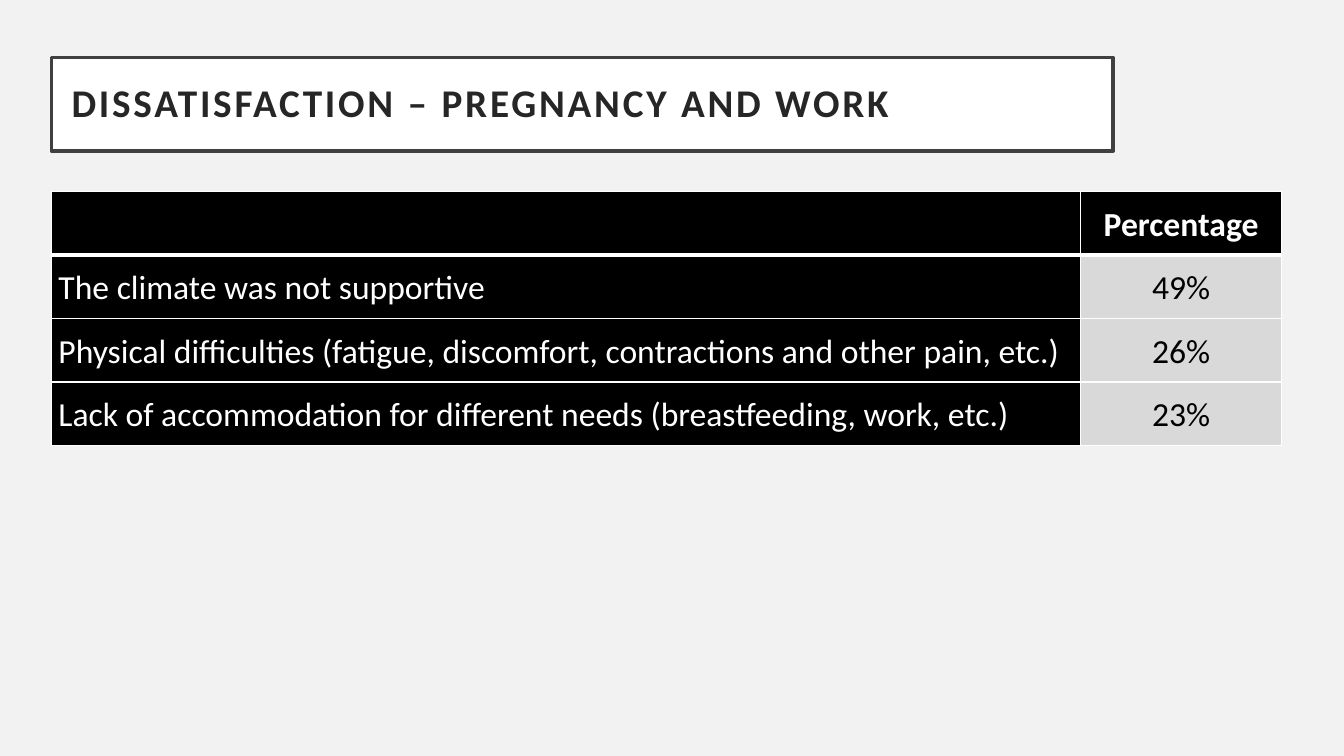
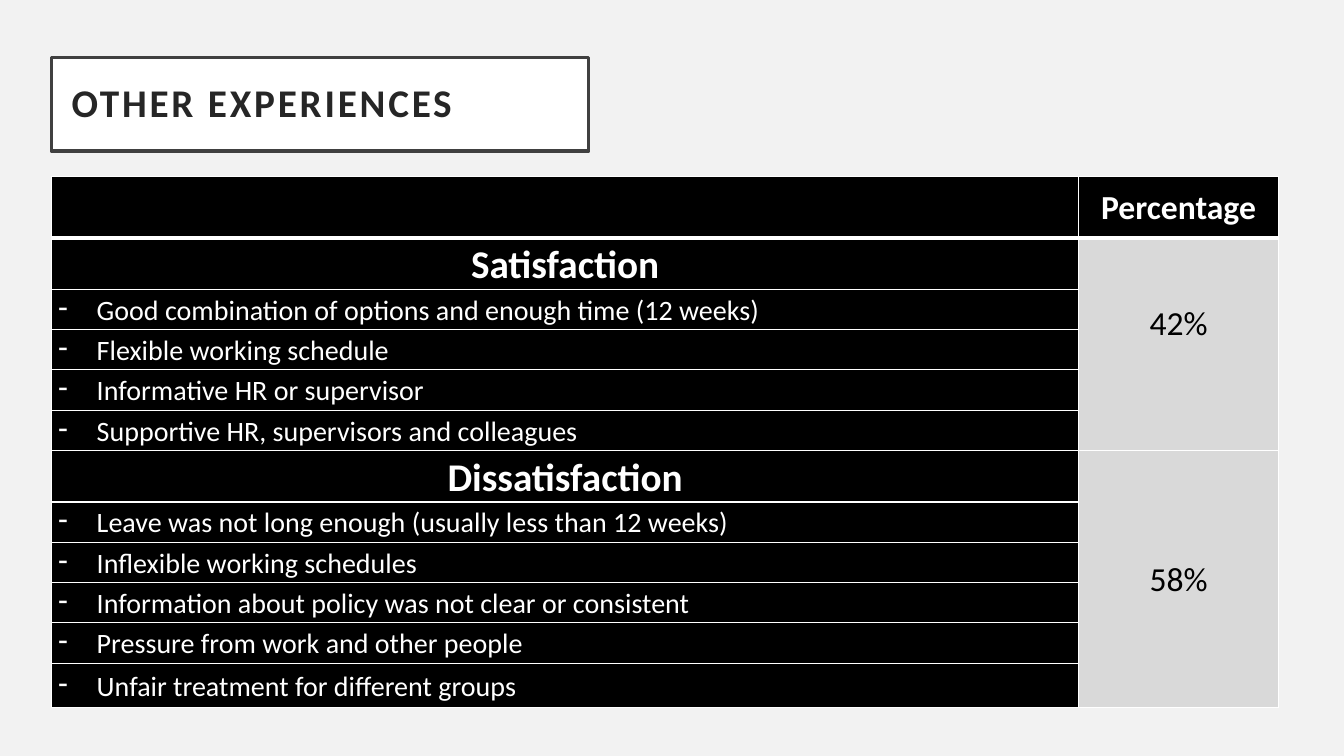
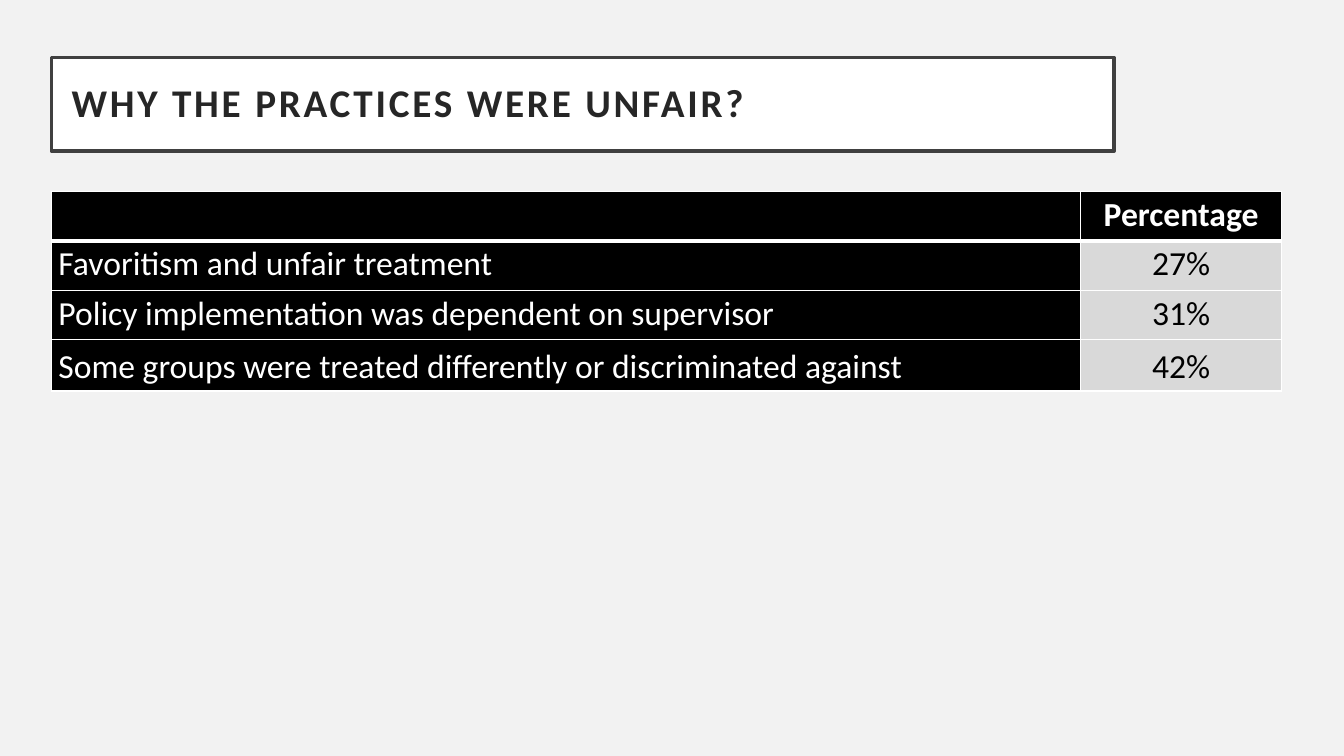
"""Build three survey slides, each with a boxed title and a percentage table."""
from lxml import etree
from pptx import Presentation
from pptx.dml.color import RGBColor
from pptx.enum import shapes, text
from pptx.oxml import ns
from pptx.util import Inches, Pt

BLACK = RGBColor(0x00, 0x00, 0x00)
WHITE = RGBColor(0xFF, 0xFF, 0xFF)
PAPER = RGBColor(0xF2, 0xF2, 0xF2)
GREY = RGBColor(0xD9, 0xD9, 0xD9)
FRAME = RGBColor(0x40, 0x40, 0x40)
INK = RGBColor(0x26, 0x26, 0x26)
FONT = "Calibri"
LEFT = 0.51
MID = text.MSO_ANCHOR.MIDDLE
TOP = text.MSO_ANCHOR.TOP
CENTER = text.PP_ALIGN.CENTER
FULL = text.PP_ALIGN.JUSTIFY


class Deck:
    """Hold the shared style and the current slide."""

    def __init__(self):
        """Start a wide deck with a pale background."""
        self.prs = Presentation()
        self.prs.slide_width = Inches(13.33)
        self.prs.slide_height = Inches(7.5)
        fill = self.prs.slide_master.background.fill
        fill.solid()
        fill.fore_color.rgb = PAPER

    def run(self, para, words, size, color, bold=False):
        """Add one run to a paragraph."""
        run = para.add_run()
        run.text = words
        font = run.font
        font.name, font.size, font.bold = FONT, Pt(size), bold
        font.color.rgb = color
        return run

    def page(self, title, width):
        """Add a slide with its framed title."""
        self.slide = self.prs.slides.add_slide(self.prs.slide_layouts[6])
        box = self.slide.shapes.add_shape(
            shapes.MSO_SHAPE.RECTANGLE, Inches(LEFT), Inches(0.57), Inches(width), Inches(0.93))
        box.shadow.inherit = False
        box.fill.solid()
        box.fill.fore_color.rgb = WHITE
        box.line.color.rgb = FRAME
        box.line.width = Pt(2.5)
        frame = box.text_frame
        frame.word_wrap = True
        frame.vertical_anchor = MID
        frame.margin_left = frame.margin_right = Inches(0.2)
        frame.margin_top = frame.margin_bottom = Inches(0.2)
        para = frame.paragraphs[0]
        para.alignment = text.PP_ALIGN.LEFT
        para.line_spacing = 0.9
        run = self.run(para, title, 28, INK, True)
        run._r.get_or_add_rPr().set("spc", "200")

    def table(self, top, cols, rows):
        """Add a table of row heights with a black header row."""
        shape = self.slide.shapes.add_table(
            len(rows), len(cols), Inches(LEFT), Inches(top), Inches(sum(cols)), Inches(sum(rows)))
        self.grid = shape.table
        self.grid.first_row = self.grid.horz_banding = False
        for col, width in zip(self.grid.columns, cols):
            col.width = Inches(width)
        for i, height in enumerate(rows):
            self.grid.rows[i].height = Inches(height)
            for j in range(len(cols)):
                cell = self.grid.cell(i, j)
                self.edge(cell, i)
                cell.fill.solid()
                cell.fill.fore_color.rgb = GREY if i and j else BLACK
                cell.margin_left = cell.margin_right = Inches(0.07)
                cell.margin_top = cell.margin_bottom = 0

    def edge(self, cell, row):
        """Draw white borders, thick under the header."""
        props = cell._tc.get_or_add_tcPr()
        thick = {0: "lnB", 1: "lnT"}.get(row)
        for side in ("lnL", "lnR", "lnT", "lnB"):
            width = Pt(3 if side == thick else 1)
            line = etree.SubElement(props, ns.qn("a:" + side), w=str(int(width)))
            fill = etree.SubElement(line, ns.qn("a:solidFill"))
            etree.SubElement(fill, ns.qn("a:srgbClr"), val=str(WHITE))

    def cell(self, row, col, words, size=24, color=WHITE, bold=False, align=CENTER, anchor=MID):
        """Fill a table cell with one paragraph."""
        cell = self.grid.cell(row, col)
        cell.vertical_anchor = anchor
        para = cell.text_frame.paragraphs[0]
        para.alignment = align
        para.line_spacing = 1.07
        self.run(para, words, size, color, bold)
        return para

    def bullet(self, row, words):
        """Fill a first-column cell with a dashed item."""
        props = self.cell(row, 0, words, 20, align=FULL)._p.get_or_add_pPr()
        props.set("marL", str(int(Inches(0.38))))
        props.set("indent", str(-int(Inches(0.38))))
        etree.SubElement(props, ns.qn("a:buChar"), char="-")

    def plain(self, title, width, rows, data, anchors):
        """Add a slide with one percentage for each reason."""
        self.page(title, width)
        self.table(1.9, (10.21, 1.99), rows)
        self.cell(0, 1, "Percentage", bold=True, anchor=anchors[0])
        for i, (label, share) in enumerate(data, 1):
            self.cell(i, 0, label, align=FULL, anchor=anchors[i])
            self.cell(i, 1, share, color=BLACK, anchor=anchors[i])

    def groups(self, title, width, data):
        """Add a slide with one percentage for each group of items."""
        self.page(title, width)
        rows = [0.61]
        for name, share, low, items in data:
            rows += [0.51] + [0.4] * len(items)
        rows[-1] = 0.44
        self.table(1.75, (10.19, 1.98), rows)
        self.cell(0, 1, "Percentage", bold=True)
        row = 1
        for name, share, low, items in data:
            last = row + len(items)
            self.grid.cell(row, 1).merge(self.grid.cell(last, 1))
            self.cell(row, 0, name, 28, bold=True)
            self.cell(row, 1, share, color=BLACK)
            self.grid.cell(row, 1).margin_bottom = Inches(low)
            for i, item in enumerate(items, row + 1):
                self.bullet(i, item)
            row = last + 1


def main():
    """Build and save the deck."""
    deck = Deck()
    deck.plain("DISSATISFACTION – PREGNANCY AND WORK", 10.53, [0.63] * 4, [
        ("The climate was not supportive", "49%"),
        ("Physical difficulties (fatigue, discomfort, contractions and other pain, etc.)", "26%"),
        ("Lack of accommodation for different needs (breastfeeding, work, etc.)", "23%"),
    ], [MID] * 4)
    deck.groups("OTHER EXPERIENCES", 5.33, [
        ("Satisfaction", "42%", 0.43, [
            "Good combination of options and enough time (12 weeks)",
            "Flexible working schedule",
            "Informative HR or supervisor",
            "Supportive HR, supervisors and colleagues",
        ]),
        ("Dissatisfaction", "58%", 0, [
            "Leave was not long enough (usually less than 12 weeks)",
            "Inflexible working schedules",
            "Information about policy was not clear or consistent",
            "Pressure from work and other people",
            "Unfair treatment for different groups",
        ]),
    ])
    deck.plain("WHY THE PRACTICES WERE UNFAIR?", 10.54, [0.49] * 3 + [0.51], [
        ("Favoritism and unfair treatment", "27%"),
        ("Policy implementation was dependent on supervisor", "31%"),
        ("Some groups were treated differently or discriminated against", "42%"),
    ], [TOP] * 3 + [MID])
    deck.prs.save("out.pptx")


if __name__ == "__main__":
    main()
